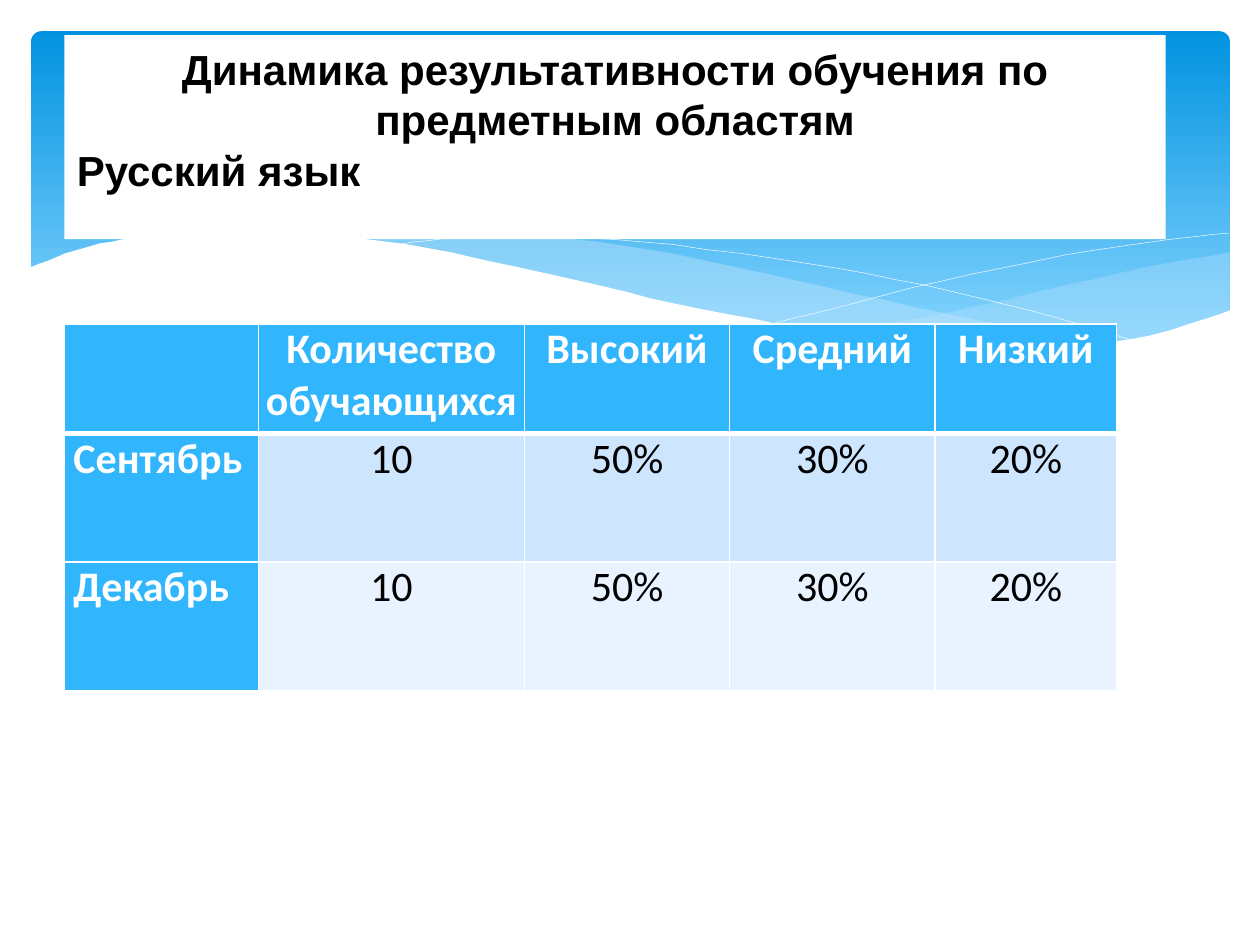
from dataclasses import dataclass
from typing import Optional

from lxml import etree
from pptx import Presentation
from pptx.dml.color import RGBColor
from pptx.enum.shapes import MSO_SHAPE
from pptx.enum.text import MSO_ANCHOR, PP_ALIGN
from pptx.oxml.ns import qn
from pptx.util import Cm, Pt

ROUNDED, RECTANGLE = MSO_SHAPE.ROUNDED_RECTANGLE, MSO_SHAPE.RECTANGLE
LEFT, CENTER = PP_ALIGN.LEFT, PP_ALIGN.CENTER
TOP, MIDDLE = MSO_ANCHOR.TOP, MSO_ANCHOR.MIDDLE
WAVE_UNIT = Cm(0.0254)  # wave points are hundredths of an inch
CURVE_STEPS = 6


@dataclass(frozen=True)
class Theme:
    white: str = "FFFFFF"
    black: str = "000000"
    banner_top: str = "0293E0"
    banner_bottom: str = "83D3FE"
    wave: str = "C6E7FC"
    accent: str = "31B6FD"
    bands: tuple = ("CEE5FE", "E8F3FF")
    title_font: str = "Arial"
    table_font: str = "Calibri"
    text_size: float = 24
    hairline: float = 0.25
    border: float = 1
    header_border: float = 3


THEME = Theme()


@dataclass(frozen=True)
class Wave:
    edges: tuple  # each edge is a smooth curve through its points
    fill: Optional[str] = None
    opacity: int = 100


# Decorative waves, from back to front
WAVES = (
    Wave((((976, 200), (891, 216), (753, 248), (661, 265)),
          ((661, 265), (745, 275), (835, 277), (913, 267), (976, 247))),
         THEME.wave, 29),
    Wave((((893, 273), (775, 254), (629, 222), (514, 198), (399, 186), (286, 191)),
          ((286, 191), (383, 207), (530, 240), (665, 266), (785, 278), (893, 273))),
         THEME.wave, 40),
    Wave((((309, 195), (387, 187), (510, 192), (665, 213), (795, 241), (907, 272)),)),
    Wave((((613, 257), (748, 223), (866, 199), (975, 185)),)),
    Wave((((977, 246), (899, 269), (809, 277), (688, 268), (555, 245), (447, 220),
           (340, 197), (250, 186), (177, 184), (106, 189), (59, 199), (23, 213)),
          ((23, 329), (977, 329))),
         THEME.white),
)

# Results table
COLUMN_WIDTHS = (3.91, 5.36, 4.14, 4.14, 3.66)
ROW_HEIGHTS = (2.21, 2.59, 2.59)
RESULTS = (
    ("", "Количество обучающихся", "Высокий", "Средний", "Низкий"),
    ("Сентябрь", "10", "50%", "30%", "20%"),
    ("Декабрь", "10", "50%", "30%", "20%"),
)


def color(code: str) -> RGBColor:
    return RGBColor.from_string(code)


def paint(shape, fill: str) -> None:
    shape.fill.solid()
    shape.fill.fore_color.rgb = color(fill)


def smooth(points: tuple) -> list:
    """Sample a Catmull-Rom curve through the points."""
    padded = (points[0], *points, points[-1])
    curve = [points[0]]
    for before, start, end, after in zip(padded, padded[1:], padded[2:], padded[3:]):
        for step in range(1, CURVE_STEPS + 1):
            t = step / CURVE_STEPS
            curve.append(tuple(
                b + ((c - a) * t + (2 * a - 5 * b + 4 * c - d) * t ** 2
                     + (3 * b - a - 3 * c + d) * t ** 3) / 2
                for a, b, c, d in zip(before, start, end, after)))
    return curve


def add_text(paragraph, text: str, font: str, ink: str, bold: bool, alignment) -> None:
    paragraph.alignment = alignment
    run = paragraph.add_run()
    run.text = text
    run.font.name = font
    run.font.size = Pt(THEME.text_size)
    run.font.bold = bold
    run.font.color.rgb = color(ink)


def add_banner(slide) -> None:
    banner = slide.shapes.add_shape(ROUNDED, Cm(0.63), Cm(0.63), Cm(24.16), Cm(6.86))
    banner.shadow.inherit = False
    banner.adjustments[0] = 0.03
    banner.line.fill.background()
    banner.fill.gradient()
    banner.fill.gradient_angle = 270
    stops = ((0, THEME.banner_top), (0.9, THEME.banner_bottom))
    for stop, (position, code) in zip(banner.fill.gradient_stops, stops):
        stop.position = position
        stop.color.rgb = color(code)


def add_wave(slide, wave: Wave) -> None:
    start, *rest = [point for edge in wave.edges for point in smooth(edge)]
    builder = slide.shapes.build_freeform(*start, scale=float(WAVE_UNIT))
    builder.add_line_segments(rest, close=wave.fill is not None)
    shape = builder.convert_to_shape()
    shape.shadow.inherit = False
    if wave.fill is None:
        shape.fill.background()
        shape.line.color.rgb = color(THEME.white)
        shape.line.width = Pt(THEME.hairline)
        return
    paint(shape, wave.fill)
    shape.line.fill.background()
    if wave.opacity < 100:
        tint = next(shape.element.spPr.iter(qn("a:srgbClr")))
        etree.SubElement(tint, qn("a:alpha"), val=str(wave.opacity * 1000))


def set_borders(cell, top: float, bottom: float) -> None:
    properties = cell._tc.get_or_add_tcPr()
    sides = (("L", THEME.border), ("R", THEME.border), ("T", top), ("B", bottom))
    for index, (side, width) in enumerate(sides):
        line = etree.Element(qn(f"a:ln{side}"), w=str(Pt(width)))
        fill = etree.SubElement(line, qn("a:solidFill"))
        etree.SubElement(fill, qn("a:srgbClr"), val=THEME.white)
        properties.insert(index, line)


def add_results(slide) -> None:
    frame = slide.shapes.add_table(len(ROW_HEIGHTS), len(COLUMN_WIDTHS), Cm(1.3), Cm(6.53),
                                   Cm(sum(COLUMN_WIDTHS)), Cm(sum(ROW_HEIGHTS)))
    table = frame.table
    for column, width in zip(table.columns, COLUMN_WIDTHS):
        column.width = Cm(width)
    for row, height in zip(table.rows, ROW_HEIGHTS):
        row.height = Cm(height)
    for row_index, values in enumerate(RESULTS):
        for column_index, value in enumerate(values):
            cell = table.cell(row_index, column_index)
            heading = row_index == 0 or column_index == 0
            paint(cell, THEME.accent if heading else THEME.bands[row_index - 1])
            cell.margin_left = cell.margin_right = Cm(0 if column_index == 1 else 0.18)
            cell.margin_top = cell.margin_bottom = Cm(0)
            cell.vertical_anchor = TOP
            set_borders(cell,
                        THEME.header_border if row_index == 1 else THEME.border,
                        THEME.header_border if row_index == 0 else THEME.border)
            if value:
                add_text(cell.text_frame.paragraphs[0], value, THEME.table_font,
                         THEME.white if heading else THEME.black, heading,
                         CENTER if column_index or not row_index else LEFT)


def add_title(slide) -> None:
    title = slide.shapes.add_shape(RECTANGLE, Cm(1.3), Cm(0.71), Cm(22.2), Cm(4.11))
    title.shadow.inherit = False
    paint(title, THEME.white)
    title.line.fill.background()
    frame = title.text_frame
    frame.word_wrap = True
    frame.vertical_anchor = MIDDLE
    frame.margin_bottom = Cm(0.86)
    add_text(frame.paragraphs[0], "Динамика результативности обучения по предметным областям",
             THEME.title_font, THEME.black, True, CENTER)
    add_text(frame.add_paragraph(), "Русский язык", THEME.title_font, THEME.black, True, LEFT)


def main() -> None:
    presentation = Presentation()
    presentation.slide_width, presentation.slide_height = Cm(25.4), Cm(19.05)
    slide = presentation.slides.add_slide(presentation.slide_layouts[6])
    add_banner(slide)
    for wave in WAVES:
        add_wave(slide, wave)
    add_results(slide)
    add_title(slide)
    presentation.save("out.pptx")


if __name__ == "__main__":
    main()
